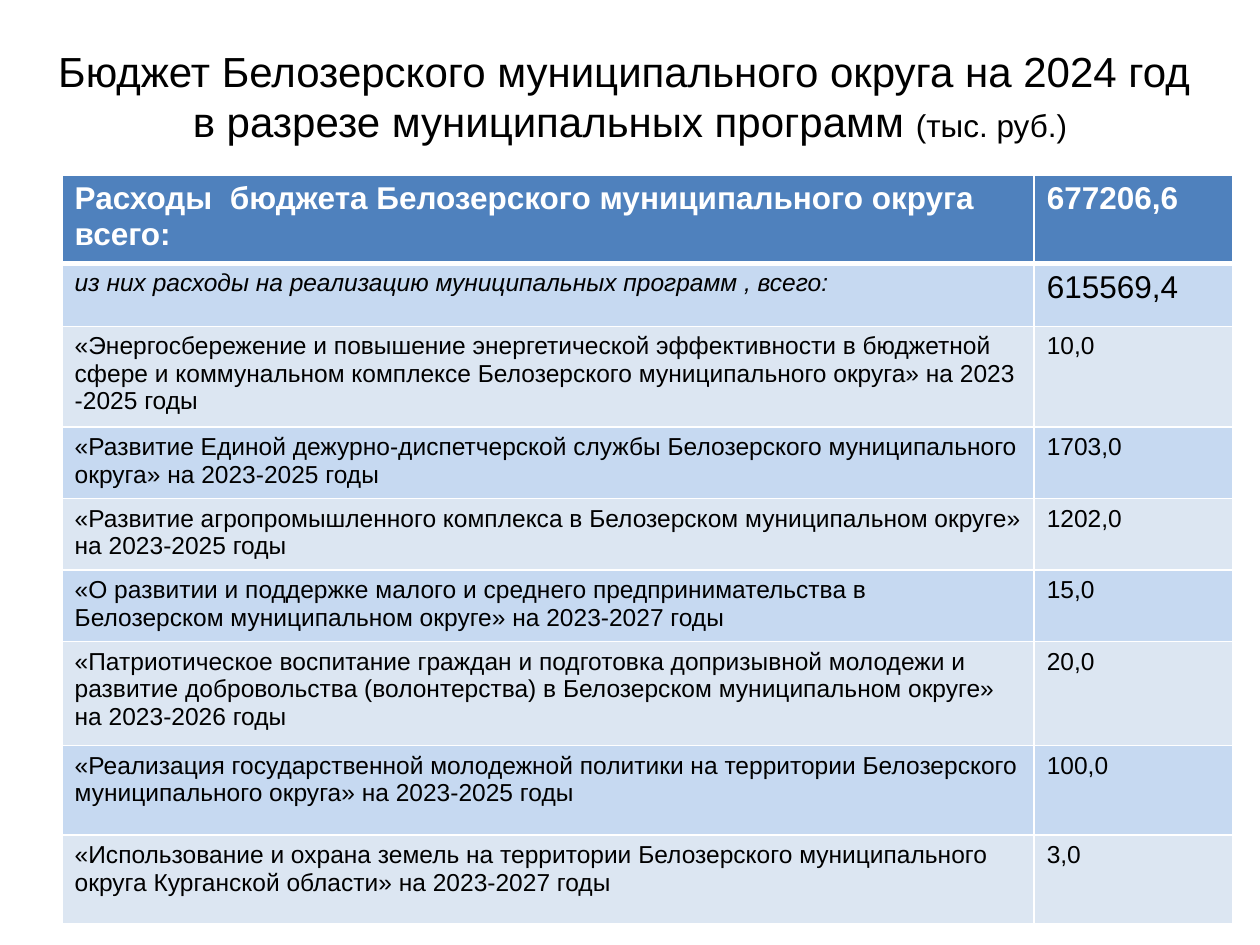
"""Build the slide with the district budget for 2024 by municipal programme."""
from dataclasses import dataclass

from lxml.etree import SubElement
from pptx import Presentation
from pptx.dml.color import RGBColor
from pptx.enum.text import MSO_ANCHOR, PP_ALIGN
from pptx.oxml.ns import qn
from pptx.util import Pt


@dataclass(frozen=True)
class Theme:
    font: str = "Arial"
    ink: str = "000000"
    white: str = "FFFFFF"
    head: str = "4F81BD"
    bands: tuple = ("DCE6F2", "C6D9F1")
    title: int = 24
    large: int = 18
    body: int = 14
    thin: int = 1
    thick: int = 3


class Page:
    def __init__(self, slide, theme):
        self.slide = slide
        self.theme = theme

    def run(self, para, text, size, color=None, bold=False, italic=False):
        run = para.add_run()
        run.text = text
        font = run.font
        font.name, font.size = self.theme.font, Pt(size)
        font.bold, font.italic = bold, italic
        font.color.rgb = RGBColor.from_string(color or self.theme.ink)

    def title(self, box, lines, unit):
        frame = self.slide.shapes.add_textbox(*map(Pt, box)).text_frame
        frame.word_wrap = True
        frame.vertical_anchor = MSO_ANCHOR.MIDDLE
        para = frame.paragraphs[0]
        para.alignment = PP_ALIGN.CENTER
        for i, line in enumerate(lines):
            if i:
                para.add_line_break()
            self.run(para, line, self.theme.title)
        self.run(para, unit, self.theme.large)

    def border(self, cell, low):
        props = cell._tc.get_or_add_tcPr()
        for side in "LRTB":
            width = low if side == "B" else self.theme.thin
            line = SubElement(props, qn(f"a:ln{side}"), w=str(Pt(width)))
            fill = SubElement(line, qn("a:solidFill"))
            SubElement(fill, qn("a:srgbClr"), val=self.theme.white)

    def cell(self, cell, text, fill, low, **style):
        self.border(cell, low)
        cell.fill.solid()
        cell.fill.fore_color.rgb = RGBColor.from_string(fill)
        self.run(cell.text_frame.paragraphs[0], text, **style)

    def table(self, left, top, widths, heights, rows):
        look = self.theme
        grid = self.slide.shapes.add_table(
            len(rows), len(widths), Pt(left), Pt(top),
            Pt(sum(widths)), Pt(sum(heights))).table
        for col, width in zip(grid.columns, widths):
            col.width = Pt(width)
        for r, (row, height) in enumerate(zip(rows, heights)):
            grid.rows[r].height = Pt(height)
            for c, text in enumerate(row):
                fill, low = look.bands[r % 2], look.thin
                style = {"size": look.body}
                if r == 0:
                    fill, low = look.head, look.thick
                    style = {"size": look.large, "color": look.white, "bold": True}
                elif r == 1:
                    style = {"size": look.large} if c else {"size": look.body, "italic": True}
                self.cell(grid.cell(r, c), text, fill, low, **style)


TITLE = ("Бюджет Белозерского муниципального округа на 2024 год ",
         "в разрезе муниципальных программ ")
ROWS = [
    ("Расходы  бюджета Белозерского муниципального округа всего:", "677206,6"),
    ("из них расходы на реализацию муниципальных программ , всего:", "615569,4"),
    ("«Энергосбережение и повышение энергетической эффективности в бюджетной сфере "
     "и коммунальном комплексе Белозерского муниципального округа» на 2023 -2025 годы",
     "10,0"),
    ("«Развитие Единой дежурно-диспетчерской службы Белозерского муниципального "
     "округа» на 2023-2025 годы", "1703,0"),
    ("«Развитие агропромышленного комплекса в Белозерском муниципальном округе» "
     "на 2023-2025 годы", "1202,0"),
    ("«О развитии и поддержке малого и среднего предпринимательства в Белозерском "
     "муниципальном округе» на 2023-2027 годы", "15,0"),
    ("«Патриотическое воспитание граждан и подготовка допризывной молодежи и развитие "
     "добровольства (волонтерства) в Белозерском муниципальном округе» "
     "на 2023-2026 годы", "20,0"),
    ("«Реализация государственной молодежной политики на территории Белозерского "
     "муниципального округа» на 2023-2025 годы", "100,0"),
    ("«Использование и охрана земель на территории Белозерского муниципального "
     "округа Курганской области» на 2023-2027 годы", "3,0"),
]
HEIGHTS = (36, 36, 52.5, 40.5, 39.5, 38.5, 59.5, 51, 51)


def main():
    deck = Presentation()
    deck.slide_width, deck.slide_height = Pt(720), Pt(540)
    page = Page(deck.slides.add_slide(deck.slide_layouts[6]), Theme())
    page.title((0, 9.5, 720, 90.5), TITLE, "(тыс. руб.)")
    page.table(35.5, 100, (555.5, 113.5), HEIGHTS, ROWS)
    deck.save("out.pptx")


if __name__ == "__main__":
    main()
